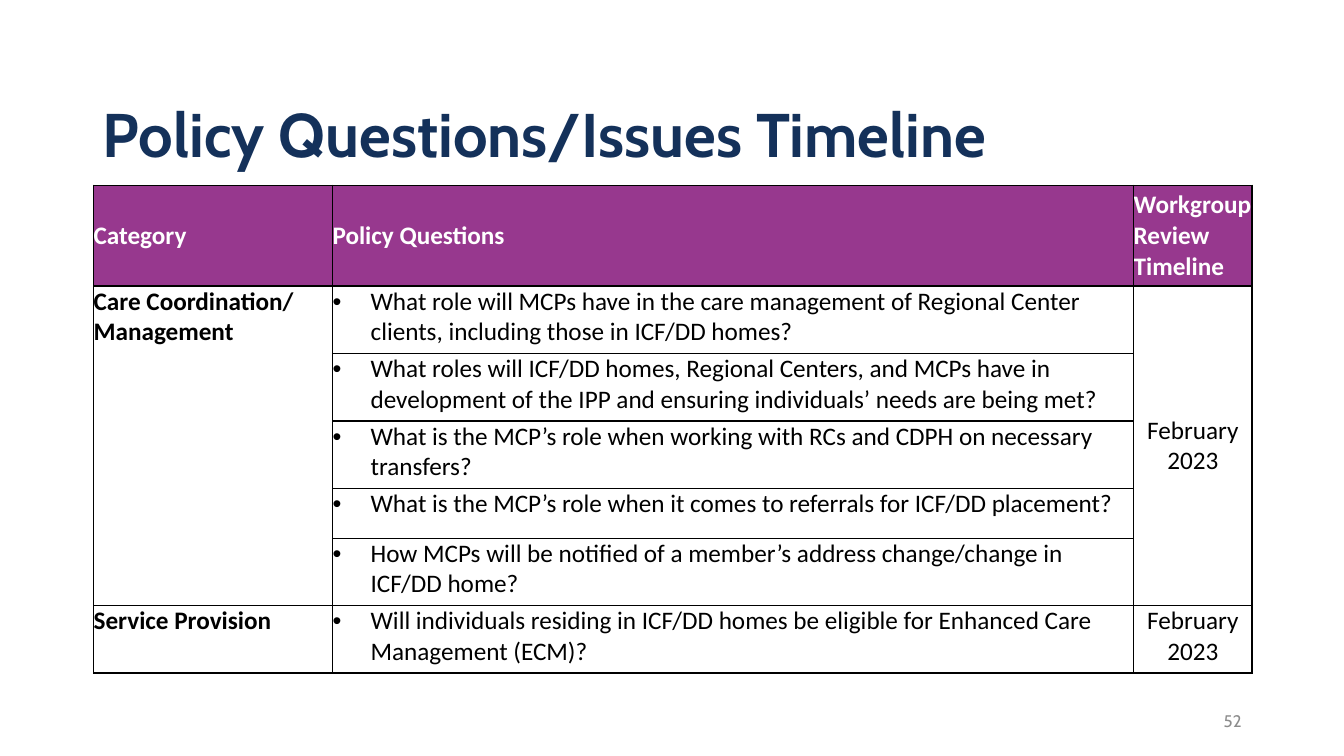
from lxml import etree
from pptx import Presentation
from pptx import util as u
from pptx.dml.color import RGBColor
from pptx.enum import text
from pptx.oxml.ns import qn

NAVY, PURPLE, BLACK, WHITE, GREY = "14315A", "97388E", "000000", "FFFFFF", "8C8C8C"
LEFT, MIDDLE, TOP = text.PP_ALIGN.LEFT, text.MSO_ANCHOR.MIDDLE, text.MSO_ANCHOR.TOP
CENTER, RIGHT = text.PP_ALIGN.CENTER, text.PP_ALIGN.RIGHT

HEADINGS = ["Category", "Policy Questions", "Workgroup Review Timeline"]
COLUMN_WIDTHS = [6.02, 20.19, 2.98]
HEADER_HEIGHT, TWO_LINES, ONE_LINE = 2.54, 1.7, 1.25
# Category, review date, questions with their row heights
CATEGORIES = [
    ("Care Coordination/ Management", "February 2023", MIDDLE, [
        ("What role will MCPs have in the care management of Regional Center "
         "clients, including those in ICF/DD homes?", TWO_LINES),
        ("What roles will ICF/DD homes, Regional Centers, and MCPs have in "
         "development of the IPP and ensuring individuals’ needs are being met?", TWO_LINES),
        ("What is the MCP’s role when working with RCs and CDPH on necessary "
         "transfers?", TWO_LINES),
        ("What is the MCP’s role when it comes to referrals for ICF/DD placement?", ONE_LINE),
        ("How MCPs will be notified of a member’s address change/change in "
         "ICF/DD home?", TWO_LINES),
    ]),
    ("Service Provision", "February 2023", TOP, [
        ("Will individuals residing in ICF/DD homes be eligible for Enhanced Care "
         "Management (ECM)?", TWO_LINES),
    ]),
]


def color(hex_code):
    return RGBColor.from_string(hex_code)


def write(paragraph, words, size, font, hex_code, bold=False, align=LEFT):
    paragraph.text = words
    paragraph.alignment = align
    paragraph.font.size = u.Pt(size)
    paragraph.font.name = font
    paragraph.font.bold = bold
    paragraph.font.color.rgb = color(hex_code)


def add_label(slide, box, words, size, hex_code, bold=False, align=LEFT):
    frame = slide.shapes.add_textbox(*map(u.Cm, box)).text_frame
    frame.word_wrap = True
    frame.vertical_anchor = MIDDLE
    write(frame.paragraphs[0], words, size, "Cabin", hex_code, bold, align)


def add_bullet(paragraph):
    properties = paragraph._p.get_or_add_pPr()
    indent = u.Cm(0.96)
    properties.set("marL", str(indent))
    properties.set("indent", str(-indent))
    etree.SubElement(properties, qn("a:buFont"), typeface="Arial")
    etree.SubElement(properties, qn("a:buChar"), char="•")


def add_borders(cell, top=1, bottom=1):
    properties = cell._tc.get_or_add_tcPr()
    for side, width in (("L", 1), ("R", 1), ("T", top), ("B", bottom)):
        line = etree.SubElement(properties, qn(f"a:ln{side}"), w=str(u.Pt(width)))
        fill = etree.SubElement(line, qn("a:solidFill"))
        etree.SubElement(fill, qn("a:srgbClr"), val=BLACK)


def fill_cell(cell, words, hex_code=BLACK, bold=False, align=LEFT, anchor=TOP, bullet=False):
    cell.vertical_anchor = anchor
    paragraph = cell.text_frame.paragraphs[0]
    if bullet:
        add_bullet(paragraph)
    write(paragraph, words, 18, "Calibri", hex_code, bold, align)


def add_timeline(slide):
    heights = [HEADER_HEIGHT] + [h for *_, questions in CATEGORIES for _, h in questions]
    timeline = slide.shapes.add_table(
        len(heights), len(HEADINGS), u.Cm(2.36), u.Cm(4.67),
        u.Cm(sum(COLUMN_WIDTHS)), u.Cm(sum(heights))).table
    for column, width in zip(timeline.columns, COLUMN_WIDTHS):
        column.width = u.Cm(width)

    # Cell frames and fills
    for index, (row, height) in enumerate(zip(timeline.rows, heights)):
        row.height = u.Cm(height)
        for cell in row.cells:
            cell.margin_left = cell.margin_right = cell.margin_top = cell.margin_bottom = 0
            add_borders(cell, top=2 if index == 1 else 1, bottom=2 if index == 0 else 1)
            cell.fill.solid()
            cell.fill.fore_color.rgb = color(WHITE if index else PURPLE)

    # Header row
    for cell, heading in zip(timeline.rows[0].cells, HEADINGS):
        fill_cell(cell, heading, WHITE, bold=True, anchor=MIDDLE)

    # Categories, each spanning its questions
    first = 1
    for category, review, review_anchor, questions in CATEGORIES:
        last = first + len(questions) - 1
        if last > first:
            for column in (0, 2):
                timeline.cell(first, column).merge(timeline.cell(last, column))
        fill_cell(timeline.cell(first, 0), category, bold=True)
        fill_cell(timeline.cell(first, 2), review, align=CENTER, anchor=review_anchor)
        for row, (question, _) in enumerate(questions, first):
            fill_cell(timeline.cell(row, 1), question, bullet=True)
        first = last + 1


def main():
    deck = Presentation()
    deck.slide_width, deck.slide_height = u.Cm(33.87), u.Cm(19.05)
    slide = deck.slides.add_slide(deck.slide_layouts[6])

    # Title, table and page number
    add_label(slide, (2.34, 1.52, 29.21, 3.68), "Policy Questions/Issues Timeline",
              44, NAVY, bold=True)
    add_timeline(slide)
    add_label(slide, (23.92, 17.66, 7.62, 1.01), "52", 12, GREY, align=RIGHT)
    deck.save("out.pptx")


if __name__ == "__main__":
    main()
